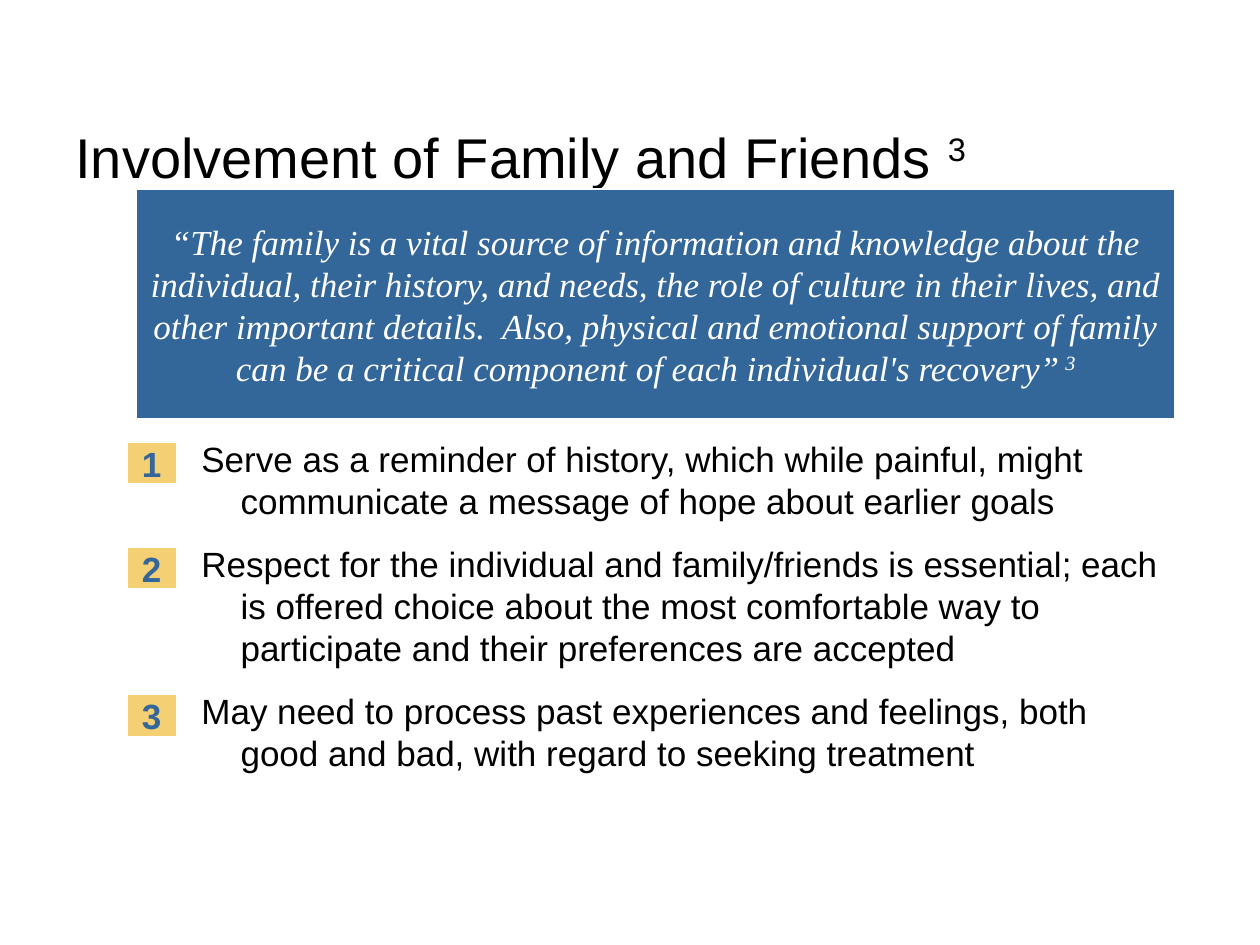
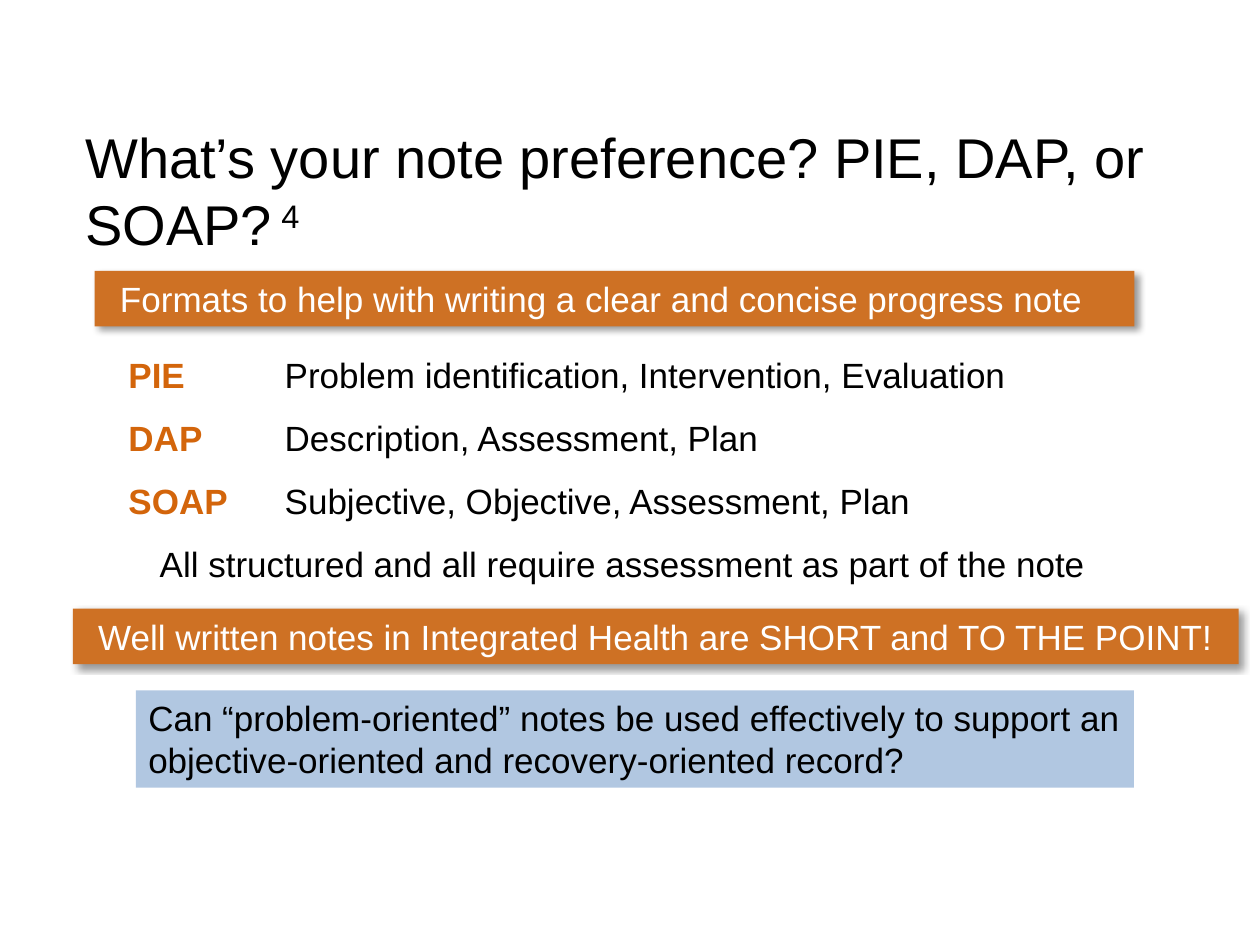
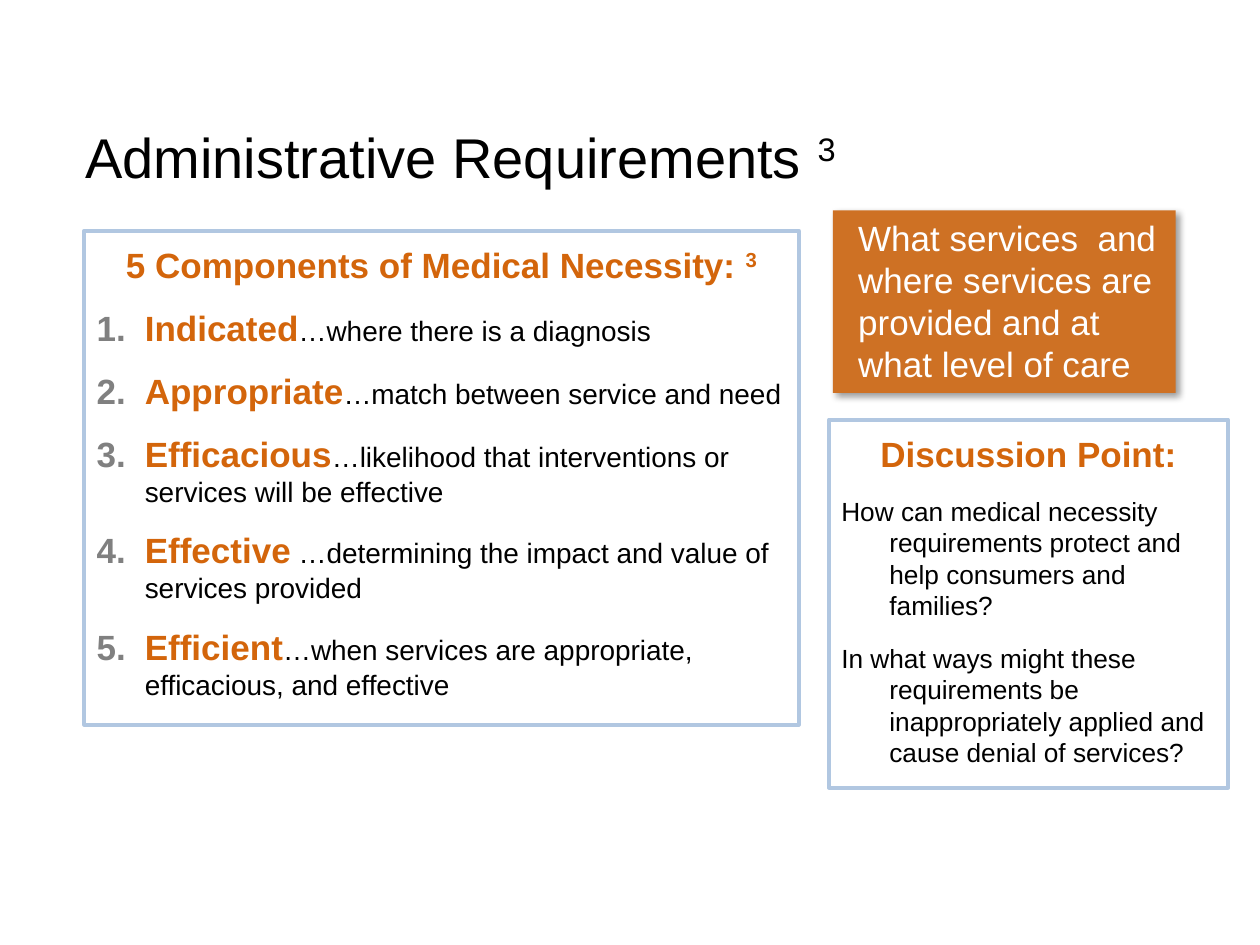
from dataclasses import dataclass
from lxml.etree import SubElement
from pptx import Presentation
from pptx.dml.color import RGBColor
from pptx.enum.shapes import MSO_SHAPE as Preset
from pptx.enum.text import MSO_ANCHOR as Anchor, MSO_AUTO_SIZE as AutoSize, PP_ALIGN as Align
from pptx.oxml.ns import qn
from pptx.util import Cm, Pt


@dataclass(frozen=True)
class Theme:
    black: str = "000000"
    white: str = "FFFFFF"
    blue: str = "336699"
    pale_blue: str = "B1C7E1"
    yellow: str = "F4CF74"
    band: str = "CE7124"
    orange: str = "D3650B"
    gray: str = "808080"
    sans: str = "Arial"
    serif: str = "Times New Roman"
    title: int = 32
    text: int = 20
    detail: int = 16
    small: int = 15
    gap: int = 12


THEME = Theme()


def style(color, size=THEME.text, name=THEME.sans, bold=False, italic=False):
    return color, dict(size=Pt(size), name=name, bold=bold, italic=italic)


STYLES = {
    "title": style(THEME.black, THEME.title),
    "text": style(THEME.black),
    "detail": style(THEME.black, THEME.detail),
    "small": style(THEME.black, THEME.small),
    "band": style(THEME.white),
    "quote": style(THEME.white, name=THEME.serif, italic=True),
    "badge": style(THEME.blue, bold=True),
    "key": style(THEME.orange, bold=True),
}
PLAIN_INSETS = (0.25, 0.13, 0.25, 0.13)
BAND_INSETS = (0.51, 0.13, 0.25, 0.13)
PANEL_INSETS = (0.25, 0.25, 0.25, 0.13)

QUOTE = (
    "“The family is a vital source of information and knowledge about the individual, "
    "their history, and needs, the role of culture in their lives, and other important details.  "
    "Also, physical and emotional support of family can be a critical component of each "
    "individual's recovery”"
)
FAMILY_POINTS = [
    ("Serve as a reminder of history, which while painful, might communicate "
     "a message of hope about earlier goals", 2),
    ("Respect for the individual and family/friends is essential; each is offered choice about "
     "the most comfortable way to participate and their preferences are accepted", 3),
    ("May need to process past experiences and feelings, both good and bad, "
     "with regard to seeking treatment", 2),
]
NOTE_FORMATS = [
    ("PIE", "Problem identification, Intervention, Evaluation"),
    ("DAP", "Description, Assessment, Plan"),
    ("SOAP", "Subjective, Objective, Assessment, Plan"),
]
COMPONENTS = [
    ("Indicated", "…where there is a diagnosis"),
    ("Appropriate", "…match between service and need"),
    ("Efficacious", "…likelihood that interventions or services will be effective"),
    ("Effective", " …determining the impact and value of services provided"),
    ("Efficient", "…when services are appropriate, efficacious, and effective"),
]
DISCUSSION = [
    "How can medical necessity requirements protect and help consumers and families?",
    "In what ways might these requirements be inappropriately applied and cause denial of services?",
]


def set_all(target, values):
    for name, value in values.items():
        setattr(target, name, value)


def place(shape, box):
    set_all(shape, dict(zip(("left", "top", "width", "height"), map(Cm, box))))


def add_run(paragraph, text, style_name, raised=False):
    color, values = STYLES[style_name]
    run = paragraph.add_run()
    run.text = text
    set_all(run.font, values)
    run.font.color.rgb = RGBColor.from_string(color)
    if raised:
        run._r.get_or_add_rPr().set("baseline", "30000")


def hang(paragraph, margin, first_line):
    properties = paragraph._p.get_or_add_pPr()
    properties.set("marL", str(Cm(margin)))
    properties.set("indent", str(Cm(first_line)))


def number(paragraph):
    properties = paragraph._p.get_or_add_pPr()
    color = SubElement(properties, qn("a:buClr"))
    SubElement(color, qn("a:srgbClr"), val=THEME.gray)
    SubElement(properties, qn("a:buAutoNum"), type="arabicPeriod")


def write(shape, paragraphs, insets=PLAIN_INSETS, anchor=Anchor.TOP, align=Align.LEFT,
          indent=None, wrap=True):
    frame = shape.text_frame
    set_all(frame, dict(auto_size=AutoSize.NONE, word_wrap=wrap, vertical_anchor=anchor))
    sides = ("margin_left", "margin_top", "margin_right", "margin_bottom")
    set_all(frame, dict(zip(sides, map(Cm, insets))))
    for index, runs in enumerate(paragraphs):
        paragraph = frame.add_paragraph() if index else frame.paragraphs[0]
        paragraph.alignment = align
        paragraph.space_before = Pt(THEME.gap if index else 0)
        if indent:
            hang(paragraph, *indent)
        for run in runs:
            add_run(paragraph, *run)
    return frame.paragraphs


def add_titled_slide(presentation, box, *runs):
    slide = presentation.slides.add_slide(presentation.slide_layouts[5])
    place(slide.shapes.title, box)
    write(slide.shapes.title, [runs])
    return slide


def add_text(slide, box, paragraphs, **options):
    shape = slide.shapes.add_textbox(*map(Cm, box))
    return write(shape, paragraphs, **options)


def add_box(slide, box, fill=None, line=None, line_width=2.25, preset=Preset.RECTANGLE):
    shape = slide.shapes.add_shape(preset, *map(Cm, box))
    shape.shadow.inherit = False
    if fill:
        shape.fill.solid()
        shape.fill.fore_color.rgb = RGBColor.from_string(fill)
    else:
        shape.fill.background()
    if line:
        shape.line.color.rgb = RGBColor.from_string(line)
        shape.line.width = Pt(line_width)
    else:
        shape.line.fill.background()
    return shape


def add_band(slide, box, text):
    shape = add_box(slide, box, THEME.band)
    effects = shape._element.spPr.find(qn("a:effectLst"))
    shadow = SubElement(effects, qn("a:outerShdw"), blurRad=str(Pt(4)), dist=str(Pt(3)),
                        dir="2700000", algn="tl", rotWithShape="0")
    color = SubElement(shadow, qn("a:srgbClr"), val=THEME.black)
    SubElement(color, qn("a:alpha"), val="40000")
    write(shape, [[(text, "band")]], insets=BAND_INSETS)


def add_panel(slide, box, heading, entries):
    shape = add_box(slide, box, line=THEME.pale_blue)
    paragraphs = write(shape, [heading, *entries], insets=PANEL_INSETS, indent=(0.97, -0.97))
    paragraphs[0].alignment = Align.CENTER
    return paragraphs[1:]


def build_family(presentation):
    slide = add_titled_slide(presentation, (1.27, 2.34, 22.23, 1.7),
                             ("Involvement of Family and Friends ", "title"), ("3", "title", True))
    add_text(slide, (2.54, 8.69, 21.16, 7.19), [[(text, "text")] for text, _ in FAMILY_POINTS],
             indent=(2.06, -0.79))
    quote = add_box(slide, (2.74, 3.81, 20.96, 4.65), THEME.blue, THEME.white, 1.5)
    write(quote, [[(QUOTE, "quote"), (" 3", "quote", True)]],
          anchor=Anchor.MIDDLE, align=Align.CENTER)
    top, line_height, gap = 8.89, 0.85, 0.42
    for order, (_, lines) in enumerate(FAMILY_POINTS, 1):
        badge = add_box(slide, (2.54, top, 1.04, 0.89), THEME.yellow, THEME.white,
                        preset=Preset.PARALLELOGRAM)
        badge.adjustments[0] = 0
        write(badge, [[(str(order), "badge")]], anchor=Anchor.MIDDLE, align=Align.CENTER, wrap=False)
        top += lines * line_height + gap


def build_notes(presentation):
    slide = add_titled_slide(presentation, (1.47, 2.34, 22.23, 2.34),
                             ("What’s your note preference? PIE, DAP, or SOAP?", "title"),
                             (" 4", "title", True))
    add_band(slide, (1.91, 5.46, 20.96, 1.12),
             "Formats to help with writing a clear and concise progress note")
    add_text(slide, (2.34, 6.99, 22.23, 3.68),
             [[(key + "\t", "key"), (meaning, "text")] for key, meaning in NOTE_FORMATS],
             indent=(3.15, -3.15))
    add_text(slide, (2.97, 10.8, 19.25, 1.12),
             [[("All structured and all require assessment as part of the note", "text")]])
    question = add_box(slide, (2.74, 13.92, 20.12, 1.96), THEME.pale_blue)
    write(question, [[("Can “problem-oriented” notes be used effectively to support an "
                       "objective-oriented and recovery-oriented record?", "text")]])
    add_band(slide, (1.47, 12.27, 23.5, 1.12),
             "Well written notes in Integrated Health are SHORT and TO THE POINT!")


def build_requirements(presentation):
    slide = add_titled_slide(presentation, (1.47, 2.34, 22.23, 2.34),
                             ("Administrative Requirements ", "title"), ("3", "title", True))
    add_panel(slide, (16.71, 8.46, 8.05, 7.42), [("Discussion Point:", "key")],
              [[(text, "small")] for text in DISCUSSION])
    components = add_panel(slide, (1.7, 4.65, 14.4, 9.96),
                           [("5 Components of Medical Necessity: ", "key"), ("3", "key", True)],
                           [[(name, "key"), (meaning, "detail")] for name, meaning in COMPONENTS])
    for paragraph in components:
        number(paragraph)
    add_band(slide, (16.79, 4.24, 6.91, 3.68),
             "What services  and where services are provided and at what level of care")


def main():
    presentation = Presentation()
    presentation.slide_width, presentation.slide_height = Cm(25.4), Cm(19.05)
    for build in (build_family, build_notes, build_requirements):
        build(presentation)
    presentation.save("out.pptx")


if __name__ == "__main__":
    main()
